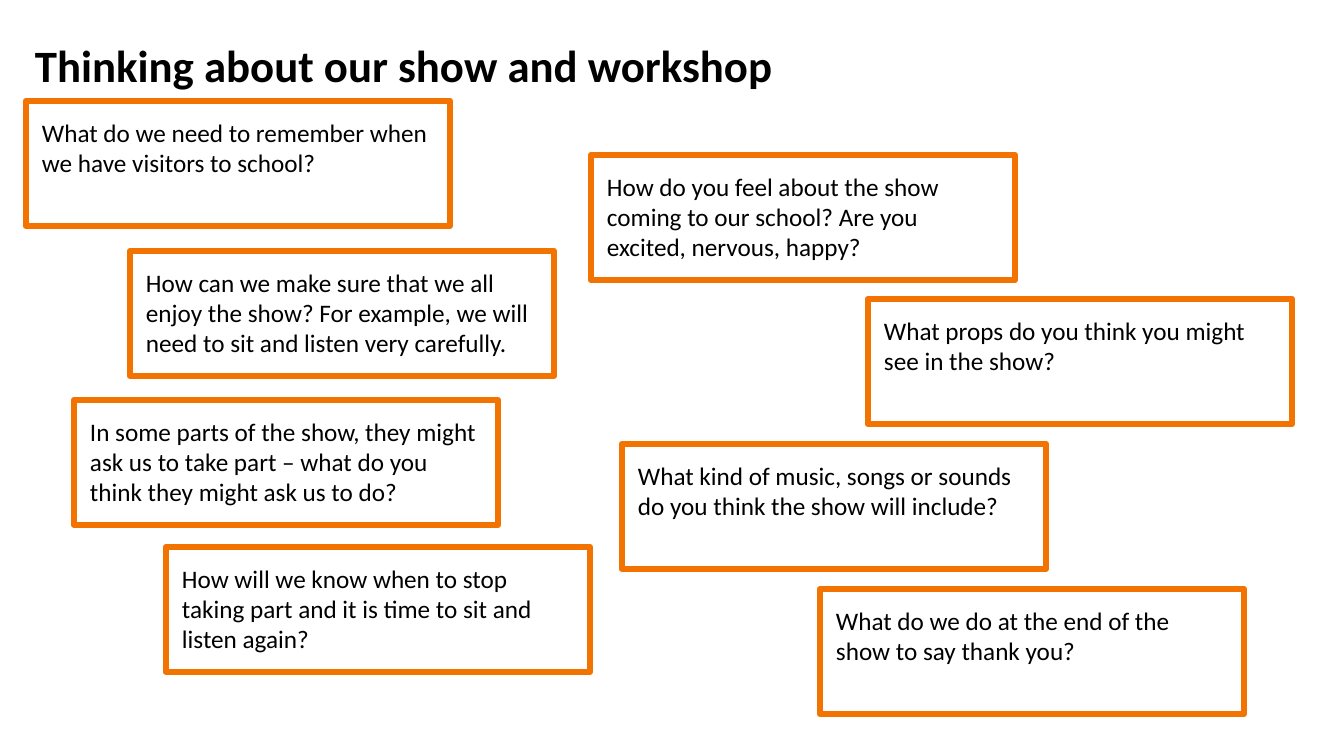
from dataclasses import dataclass

from pptx import Presentation
from pptx import util as u
from pptx.dml.color import RGBColor
from pptx.enum import shapes, text


@dataclass(frozen=True)
class Theme:
    """Colours, font and type sizes of the slide."""
    ink: RGBColor = RGBColor(0x00, 0x00, 0x00)
    paper: RGBColor = RGBColor(0xFF, 0xFF, 0xFF)
    orange: RGBColor = RGBColor(0xF2, 0x73, 0x00)
    font: str = "Calibri"
    heading_size: int = 32
    question_size: int = 18
    border: float = 4.5


THEME = Theme()
PX_PER_INCH = 100.8
SLIDE = (1344, 756)
HEADING_BOX = (35, 37, 971, 63)
CARD_SIZE = (424, 125)
CARD_INSET = 16

LEFT_QUESTIONS = [
    (26, 101, "What do we need to remember when we have visitors to school?"),
    (130, 251, "How can we make sure that we all enjoy the show? For example, "
               "we will need to sit and listen very carefully."),
    (74, 400, "In some parts of the show, they might ask us to take part – "
              "what do you think they might ask us to do?"),
    (166, 547, "How will we know when to stop taking part and it is time to "
               "sit and listen again?"),
]
RIGHT_QUESTIONS = [
    (591, 155, "How do you feel about the show coming to our school? "
               "Are you excited, nervous, happy?"),
    (868, 299, "What props do you think you might see in the show?"),
    (622, 444, "What kind of music, songs or sounds do you think the show "
               "will include?"),
    (820, 589, "What do we do at the end of the show to say thank you?"),
]


def px(length):
    """Turn a length in px into EMU."""
    return u.Inches(length / PX_PER_INCH)


def apply(target, values):
    """Set each named format value on the target."""
    for key, value in values.items():
        setattr(target, key, value)


def write(frame, words, size, bold, anchor, insets, spacing):
    """Fill a text frame with one left-aligned paragraph."""
    left, top, right, bottom = map(px, insets)
    apply(frame, {"word_wrap": True, "vertical_anchor": anchor,
                  "margin_left": left, "margin_top": top,
                  "margin_right": right, "margin_bottom": bottom})
    paragraph = frame.paragraphs[0]
    apply(paragraph, {"alignment": text.PP_ALIGN.LEFT, **spacing})
    run = paragraph.add_run()
    run.text = words
    apply(run.font, {"name": THEME.font, "size": u.Pt(size), "bold": bold})
    run.font.color.rgb = THEME.ink


def add_heading(slide, box, words):
    """Place the slide heading in its box."""
    heading = slide.shapes.add_textbox(*map(px, box))
    write(heading.text_frame, words, THEME.heading_size, True,
          text.MSO_ANCHOR.MIDDLE, (0, 5, 0, 5), {"line_spacing": 0.9})


def add_question(slide, box, words):
    """Place one orange-framed question card in its box."""
    card = slide.shapes.add_shape(shapes.MSO_SHAPE.RECTANGLE, *map(px, box))
    card.shadow.inherit = False
    card.fill.solid()
    card.fill.fore_color.rgb = THEME.paper
    card.line.color.rgb = THEME.orange
    card.line.width = u.Pt(THEME.border)
    write(card.text_frame, words, THEME.question_size, False,
          text.MSO_ANCHOR.TOP, (CARD_INSET,) * 4, {"space_after": u.Pt(10)})


def main():
    """Build the slide and save it."""
    deck = Presentation()
    deck.slide_width, deck.slide_height = map(px, SLIDE)
    slide = deck.slides.add_slide(deck.slide_layouts[6])
    add_heading(slide, HEADING_BOX, "Thinking about our show and workshop")
    for left, top, question in LEFT_QUESTIONS + RIGHT_QUESTIONS:
        add_question(slide, (left, top, *CARD_SIZE), question)
    deck.save("out.pptx")


if __name__ == "__main__":
    main()
